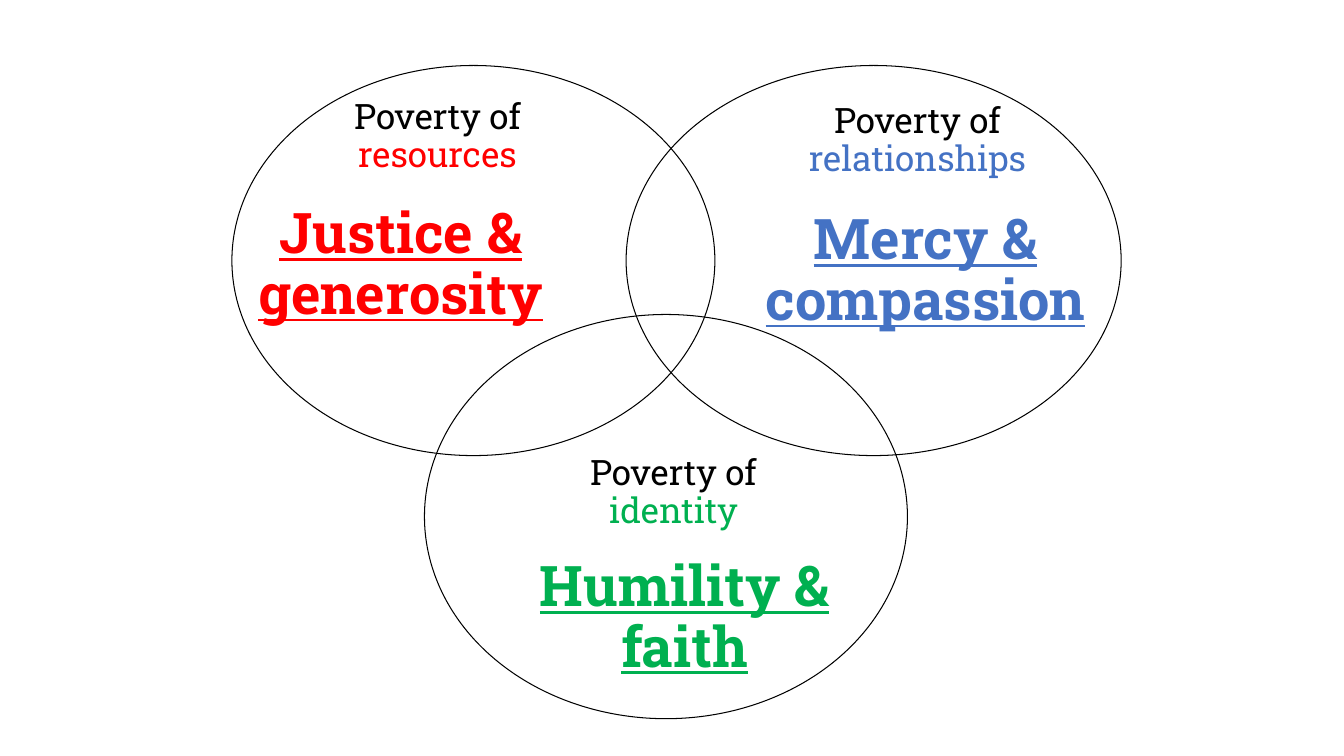
"""Build a three-circle diagram of kinds of poverty and their answers."""
from dataclasses import dataclass

from pptx import Presentation
from pptx.dml.color import RGBColor
from pptx.enum.shapes import MSO_SHAPE
from pptx.enum.text import MSO_ANCHOR, MSO_AUTO_SIZE, PP_ALIGN
from pptx.slide import Slide
from pptx.util import Inches, Pt

OVAL = MSO_SHAPE.OVAL
TOP = MSO_ANCHOR.TOP
GROW = MSO_AUTO_SIZE.SHAPE_TO_FIT_TEXT
CENTER = PP_ALIGN.CENTER
FONT = "Roboto Slab"
BLACK = "000000"
Box = tuple[float, float, float, float]


@dataclass
class Run:
    """A piece of text with its own look."""
    text: str
    color: str
    size: int = 25
    strong: bool = False


@dataclass
class Circle:
    """One kind of poverty and the answer to it."""
    oval: Box
    need: str
    need_box: Box
    answer: str
    answer_box: Box
    color: str


CIRCLES = [
    Circle((2.3, 0.65, 4.79, 3.87), "resources", (2.82, 0.94, 3.04, 0.94),
           "Justice & generosity", (2.3, 1.99, 3.35, 1.45), "FF0000"),
    Circle((4.21, 3.12, 4.79, 4.01), "identity", (5.31, 4.47, 2.74, 0.98),
           "Humility & faith", (4.69, 5.49, 4.2, 1.45), "00B050"),
    Circle((6.21, 0.65, 4.91, 3.87), "relationships", (7.22, 0.98, 3.76, 0.94),
           "Mercy & compassion", (7.43, 2.05, 3.5, 1.45), "4472C4"),
]


def rgb(color: str) -> RGBColor:
    """Turn a hex string into a colour."""
    return RGBColor.from_string(color)


def add_oval(slide: Slide, box: Box) -> None:
    """Draw an unfilled oval with a thin black line."""
    oval = slide.shapes.add_shape(OVAL, *map(Inches, box))
    oval.shadow.inherit = False
    oval.fill.background()
    oval.line.color.rgb = rgb(BLACK)
    oval.line.width = Pt(0.75)


def add_text(slide: Slide, box: Box, runs: list[Run]) -> None:
    """Write one centred paragraph run by run."""
    frame = slide.shapes.add_textbox(*map(Inches, box)).text_frame
    frame.word_wrap = True
    frame.auto_size = GROW
    frame.vertical_anchor = TOP
    para = frame.paragraphs[0]
    para.alignment = CENTER
    para.line_spacing = 0.9
    for item in runs:
        run = para.add_run()
        run.text = item.text
        run.font.name = FONT
        run.font.size = Pt(item.size)
        run.font.bold = run.font.underline = item.strong
        run.font.color.rgb = rgb(item.color)


def main() -> None:
    """Build and save the slide."""
    deck = Presentation()
    deck.slide_width, deck.slide_height = Inches(13.33), Inches(7.5)
    slide = deck.slides.add_slide(deck.slide_layouts[6])
    for circle in CIRCLES:
        add_oval(slide, circle.oval)
    for circle in CIRCLES:
        add_text(slide, circle.need_box,
                 [Run("Poverty of ", BLACK), Run(circle.need, circle.color)])
    for circle in CIRCLES:
        add_text(slide, circle.answer_box,
                 [Run(circle.answer, circle.color, 40, True)])
    deck.save("out.pptx")


if __name__ == "__main__":
    main()
